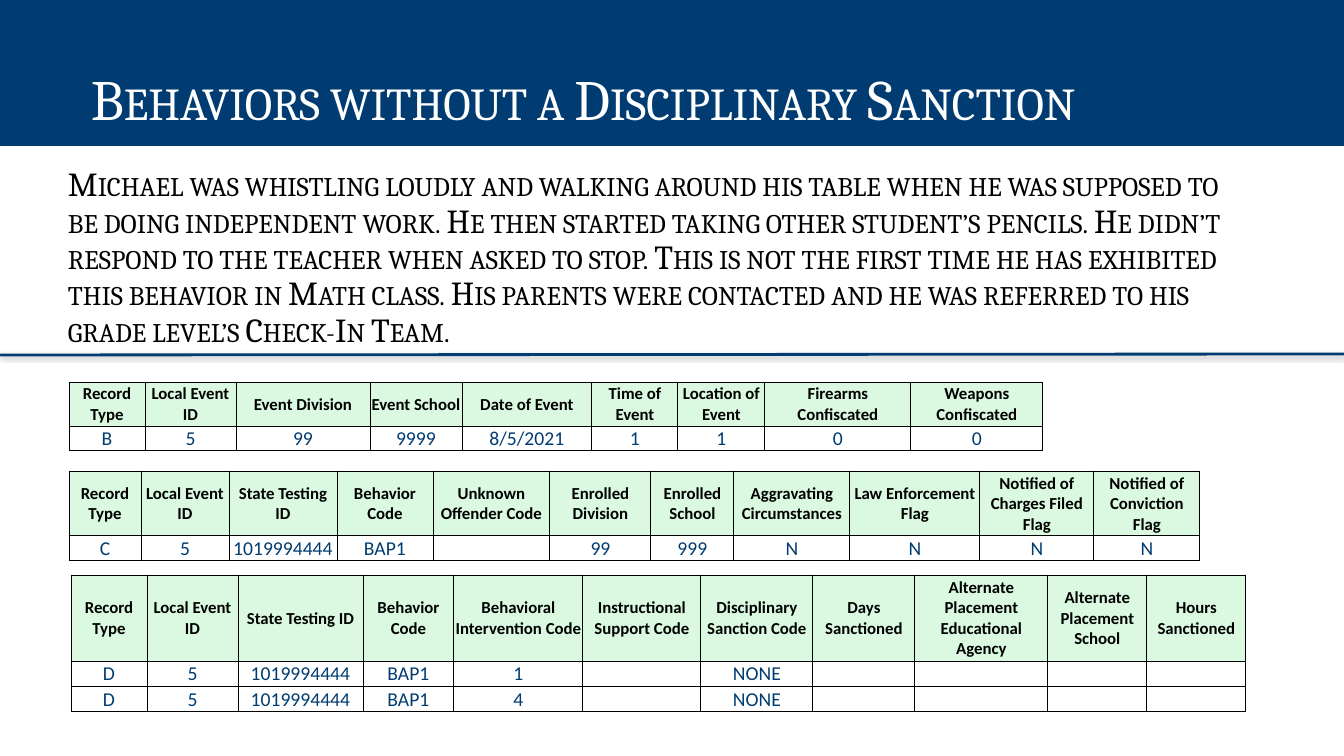
from lxml import etree
from pptx import Presentation
from pptx.dml.color import RGBColor
from pptx.enum.shapes import MSO_CONNECTOR, MSO_SHAPE
from pptx.enum.text import MSO_ANCHOR, PP_ALIGN
from pptx.oxml.ns import qn
from pptx.util import Pt

PX = 914400 / 100.8
NAVY = RGBColor(0x00, 0x3C, 0x71)
MINT = RGBColor(0xDA, 0xF9, 0xE0)
BLACK = RGBColor(0, 0, 0)
WHITE = RGBColor(255, 255, 255)
RECT, LINE = MSO_SHAPE.RECTANGLE, MSO_CONNECTOR.STRAIGHT
TOP, MIDDLE = MSO_ANCHOR.TOP, MSO_ANCHOR.MIDDLE
LEFT, CENTER = PP_ALIGN.LEFT, PP_ALIGN.CENTER


def px(*nums):
    return [round(n * PX) for n in nums]


def caps(shape, text, size, color, insets):
    """Fill a shape with one paragraph of Cambria small caps."""
    frame = shape.text_frame
    frame.word_wrap = True
    frame.vertical_anchor = TOP
    (frame.margin_left, frame.margin_top,
     frame.margin_right, frame.margin_bottom) = px(*insets)
    frame.text = text
    para = frame.paragraphs[0]
    para.alignment = LEFT
    para.line_spacing = 0.9
    font = para.runs[0].font
    font.name, font.size = "Cambria", Pt(size)
    font.color.rgb = color
    para.runs[0]._r.get_or_add_rPr().set("cap", "small")


deck = Presentation()
deck.slide_width, deck.slide_height = px(1344, 756)
slide = deck.slides.add_slide(deck.slide_layouts[6])
shapes = slide.shapes

# Title band
band = shapes.add_shape(RECT, *px(0, 0, 1344, 146))
band.shadow.inherit = False
band.fill.solid()
band.fill.fore_color.rgb = NAVY
band.line.fill.background()
caps(band, "Behaviors without a Disciplinary Sanction", 40.7, WHITE,
     (91, 71, 10, 5))

# Scenario
story = shapes.add_textbox(*px(55, 161, 1200, 567))
caps(story, "Michael was whistling loudly and walking around his table when "
     "he was supposed to be doing independent work. He then started taking "
     "other student’s pencils. He didn’t respond to the teacher when asked "
     "to stop. This is not the first time he has exhibited this behavior in "
     "Math class. His parents were contacted and he was referred to his "
     "grade level’s Check-In Team.", 24, BLACK, (13, 7, 13, 7))

# Divider with a soft shadow below
rule = shapes.add_connector(LINE, *px(0, 355, 1344, 354))
rule.line.color.rgb = NAVY
rule.line.width = Pt(2)
effect = etree.SubElement(rule._element.spPr, qn("a:effectLst"))
shade = etree.SubElement(effect, qn("a:outerShdw"), blurRad=str(Pt(3.1)),
                         dist=str(Pt(1.6)), dir="5400000", rotWithShape="0")
tint = etree.SubElement(shade, qn("a:srgbClr"), val="000000")
etree.SubElement(tint, qn("a:alpha"), val="38000")

# Record tables: left, top, column widths, row heights, rows
TABLES = [
    (69, 382, [76, 91, 134, 92, 130, 86, 87, 146, 132], [44, 24], [
        ["Record Type", "Local Event ID", "Event Division", "Event School",
         "Date of Event", "Time of Event", "Location of Event",
         "Firearms Confiscated", "Weapons Confiscated"],
        ["B", "5", "99", "9999", "8/5/2021", "1", "1", "0", "0"]]),
    (69, 471, [72, 88, 108, 96, 117, 101, 83, 116, 130, 114, 106], [65, 25], [
        ["Record Type", "Local Event ID", "State Testing ID",
         "Behavior Code", "Unknown Offender Code", "Enrolled Division",
         "Enrolled School", "Aggravating Circumstances",
         "Law Enforcement Flag", "Notified of Charges Filed Flag",
         "Notified of Conviction Flag"],
        ["C", "5", "1019994444", "BAP1", "", "99", "999",
         "N", "N", "N", "N"]]),
    (71, 575, [76, 91, 125, 91, 129, 118, 112, 102, 133, 99, 99],
     [86, 25, 26], [
        ["Record Type", "Local Event ID", "State Testing ID",
         "Behavior Code", "Behavioral Intervention Code",
         "Instructional Support Code", "Disciplinary Sanction Code",
         "Days Sanctioned", "Alternate Placement Educational Agency",
         "Alternate Placement School", "Hours Sanctioned"],
        ["D", "5", "1019994444", "BAP1", "1", "", "NONE", "", "", "", ""],
        ["D", "5", "1019994444", "BAP1", "4", "", "NONE", "", "", "", ""]]),
]

for left, top, widths, heights, rows in TABLES:
    box = px(left, top, sum(widths), sum(heights))
    grid = shapes.add_table(len(rows), len(widths), *box).table
    for col, width in zip(grid.columns, px(*widths)):
        col.width = width
    for row, height in zip(grid.rows, px(*heights)):
        row.height = height
    for r, row in enumerate(rows):
        head = r == 0
        for c, text in enumerate(row):
            cell = grid.cell(r, c)
            cell.margin_left, cell.margin_top, cell.margin_right = px(1, 1, 1)
            cell.margin_bottom = 0
            cell.vertical_anchor = MIDDLE
            # Borders come before the fill
            props = cell._tc.get_or_add_tcPr()
            for side in ("a:lnL", "a:lnR", "a:lnT", "a:lnB"):
                edge = etree.SubElement(props, qn(side), w=str(Pt(0.75)))
                paint = etree.SubElement(edge, qn("a:solidFill"))
                etree.SubElement(paint, qn("a:srgbClr"), val=str(BLACK))
            if head:
                cell.fill.solid()
                cell.fill.fore_color.rgb = MINT
            else:
                cell.fill.background()
            para = cell.text_frame.paragraphs[0]
            para.alignment = CENTER
            if not text:
                # Keep an empty cell from stretching its row
                etree.SubElement(para._p, qn("a:endParaRPr"), sz="1400")
                continue
            para.text = text
            font = para.runs[0].font
            font.name, font.bold = "Calibri", head
            font.size = Pt(12 if head else 14)
            font.color.rgb = BLACK if head else NAVY

deck.save("out.pptx")
